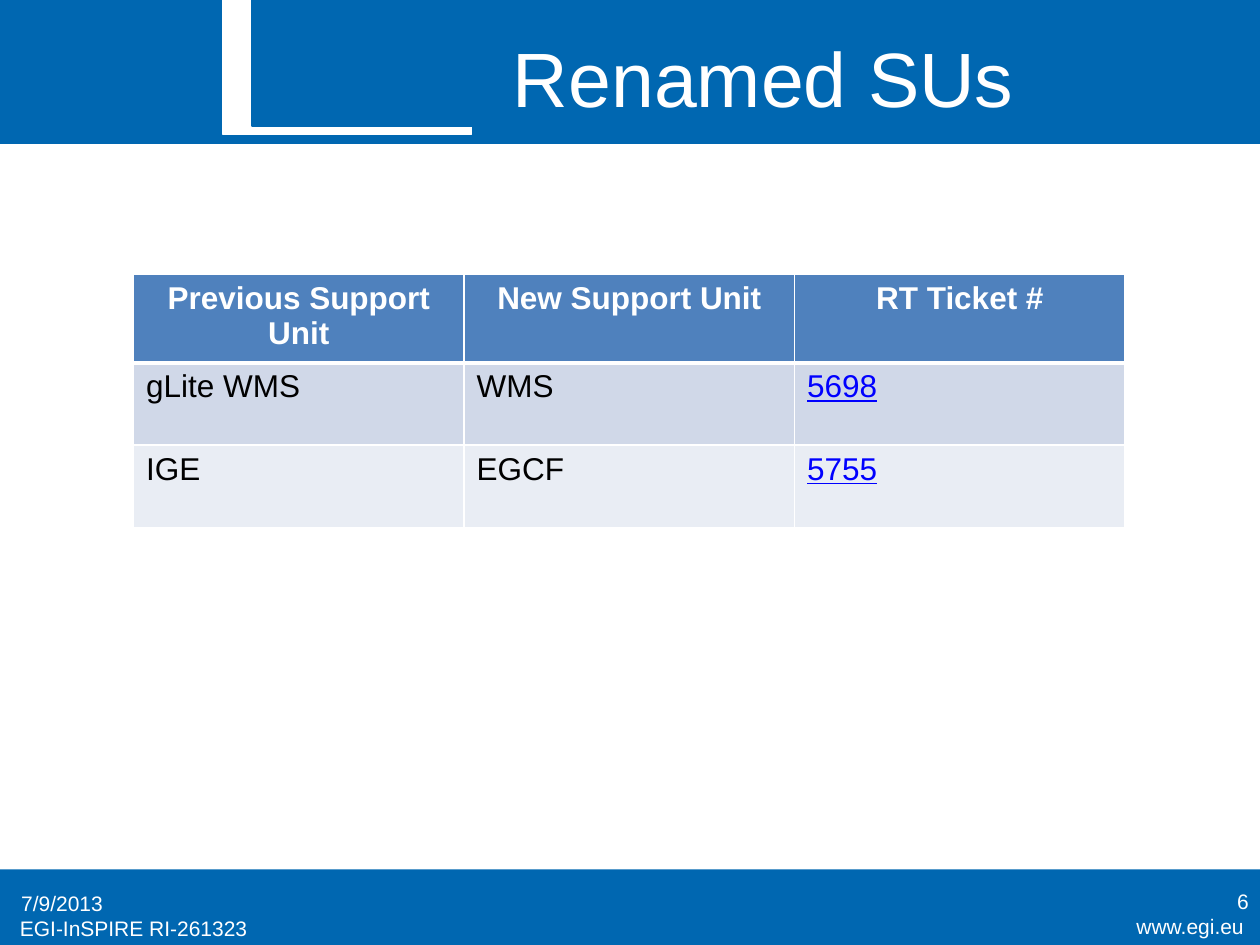
from pptx import Presentation
from pptx import util as u
from pptx.dml.color import RGBColor
from pptx.enum import shapes, text
from pptx.oxml import parse_xml
from pptx.oxml.ns import nsdecls

BLUE = RGBColor(0x00, 0x67, 0xB1)
WHITE = RGBColor(0xFF, 0xFF, 0xFF)
BLACK = RGBColor(0x00, 0x00, 0x00)
LINK = RGBColor(0x00, 0x00, 0xFF)
HEADER = RGBColor(0x4F, 0x81, 0xBD)
BANDS = [RGBColor(0xD0, 0xD8, 0xE8), RGBColor(0xE9, 0xED, 0xF4)]

ROWS = [
    ["Previous Support Unit", "New Support Unit", "RT Ticket #"],
    ["gLite WMS", "WMS", "5698"],
    ["IGE", "EGCF", "5755"],
]


def add_run(p, words, size, color, bold=False, underline=False):
    r = p.add_run()
    r.text = words
    f = r.font
    f.name, f.size, f.bold, f.underline = "Arial", u.Pt(size), bold, underline
    f.color.rgb = color


def paint(sp, color, outlined=True):
    sp.shadow.inherit = False
    sp.fill.solid()
    sp.fill.fore_color.rgb = color
    if outlined:
        sp.line.color.rgb = color
        sp.line.width = u.Pt(0.75)
    else:
        sp.line.fill.background()


def add_bar(s, box, color, outlined=True):
    sp = s.shapes.add_shape(shapes.MSO_SHAPE.RECTANGLE, *map(u.Inches, box))
    paint(sp, color, outlined)


def curve_points(start, c1, c2, end, steps=40):
    for i in range(1, steps + 1):
        t = i / steps
        weights = ((1 - t) ** 3, 3 * t * (1 - t) ** 2, 3 * t * t * (1 - t), t ** 3)
        yield tuple(sum(w * q[axis] for w, q in zip(weights, (start, c1, c2, end)))
                    for axis in (0, 1))


def add_swoosh(s, box):
    x, y, w, h = box
    add_bar(s, box, WHITE)
    right, bottom, bend = x + w, y + h, x + 0.4 * w
    fb = s.shapes.build_freeform(right, y, scale=u.Inches(1))
    fb.add_line_segments([(right, bottom), (x, bottom)], close=False)
    fb.add_line_segments(curve_points((x, bottom), (bend, bottom), (x, y), (bend, y)))
    paint(fb.convert_to_shape(), BLUE)


def add_header(s, box, title):
    x, y, w, h = box
    add_bar(s, box, BLUE)
    add_swoosh(s, (x + 1.77, y, 1.97, 1.07))
    sp = s.shapes.title
    s.shapes._spTree.append(sp._element)
    sp.left, sp.top, sp.width, sp.height = map(u.Inches, (x + 2.32, y + 0.13, 7.48, 0.95))
    tf = sp.text_frame
    tf.vertical_anchor = text.MSO_ANCHOR.MIDDLE
    p = tf.paragraphs[0]
    p.alignment = text.PP_ALIGN.CENTER
    add_run(p, title, 44, WHITE)


def add_label(s, box, words, align, anchor):
    tf = s.shapes.add_textbox(*map(u.Inches, box)).text_frame
    tf.word_wrap = True
    tf.vertical_anchor = anchor
    p = tf.paragraphs[0]
    p.alignment = align
    add_run(p, words, 12, WHITE)


def add_footer(s, box):
    x, y, w, h = box
    left, right = text.PP_ALIGN.LEFT, text.PP_ALIGN.RIGHT
    top, middle = text.MSO_ANCHOR.TOP, text.MSO_ANCHOR.MIDDLE
    add_bar(s, box, BLUE, outlined=False)
    add_label(s, (x + 8.39, y + 0.3, 1.58, 0.31), "www.egi.eu", right, top)
    add_label(s, (x + 0.06, y + 0.32, 2.5, 0.31), "EGI-InSPIRE RI-261323", left, top)
    add_label(s, (x + 0.07, y + 0.07, 2.33, 0.4), "7/9/2013", left, middle)
    add_label(s, (x + 7.68, y + 0.05, 2.33, 0.4), "6", right, middle)


def set_borders(cell, widths):
    tcPr = cell._tc.get_or_add_tcPr()
    for side, width in widths.items():
        tcPr.append(parse_xml(
            f'<a:ln{side} {nsdecls("a")} w="{u.Pt(width)}"><a:solidFill>'
            f'<a:srgbClr val="{WHITE}"/></a:solidFill></a:ln{side}>'))


def add_units_table(s, box, rows):
    tbl = s.shapes.add_table(len(rows), len(rows[0]), *map(u.Inches, box)).table
    for i, row in enumerate(rows):
        head = i == 0
        for j, words in enumerate(row):
            cell = tbl.cell(i, j)
            set_borders(cell, {"L": 1, "R": 1, "T": 3 if i == 1 else 1, "B": 3 if head else 1})
            cell.fill.solid()
            cell.fill.fore_color.rgb = HEADER if head else BANDS[(i - 1) % 2]
            p = cell.text_frame.paragraphs[0]
            p.alignment = text.PP_ALIGN.CENTER if head else text.PP_ALIGN.LEFT
            ticket = not head and j == len(row) - 1
            color = WHITE if head else LINK if ticket else BLACK
            add_run(p, words, 18, color, bold=head, underline=ticket)


def main():
    prs = Presentation()
    prs.slide_width, prs.slide_height = u.Inches(10), u.Inches(7.5)
    s = prs.slides.add_slide(prs.slide_layouts[5])
    add_header(s, (0, 0, 10, 1.14), "Renamed SUs")
    add_footer(s, (0, 6.9, 10, 0.6))
    add_units_table(s, (1.06, 2.18, 7.87, 1.96), ROWS)
    prs.save("out.pptx")


if __name__ == "__main__":
    main()
